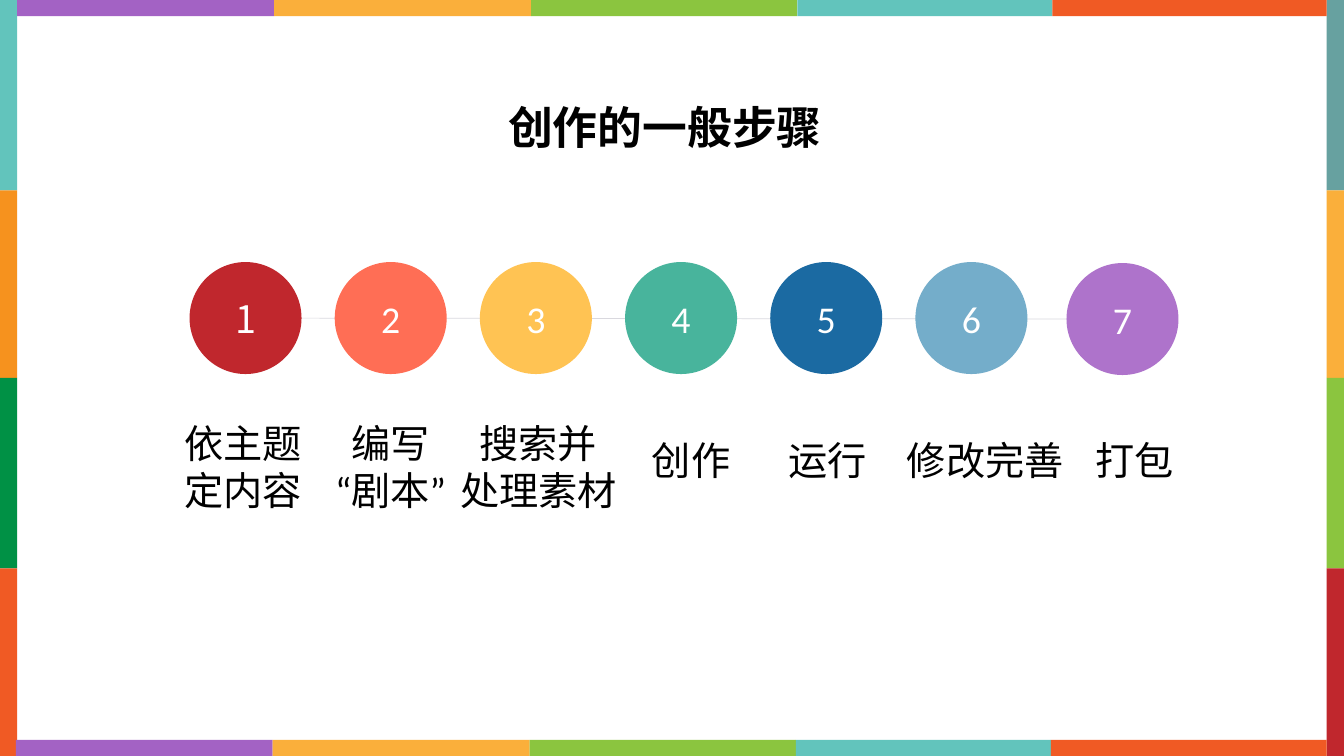
import itertools

import pptx
import pptx.dml.color
import pptx.enum.shapes
import pptx.enum.text
import pptx.oxml
import pptx.oxml.ns
import pptx.util

Pt = pptx.util.Pt
SHAPE = pptx.enum.shapes.MSO_SHAPE
ALIGN = pptx.enum.text.PP_ALIGN
ANCHOR = pptx.enum.text.MSO_ANCHOR

WIDTH, HEIGHT = 960, 540
COLOURS = {
    "black": "000000", "white": "FFFFFF", "thread": "524F6A",
    "aqua": "62C4BC", "orange": "F6921E", "forest": "009145",
    "flame": "F05A24", "sage": "67A1A0", "amber": "FAAF3B",
    "lime": "8BC53F", "red": "C0272D", "purple": "A362C4",
    "coral": "FF6E55", "yellow": "FFC353", "green": "48B49C",
    "blue": "1B6AA2", "sky": "74ADCA", "lilac": "AE73CB",
}
LATIN, CHINESE = "Calibri", "Noto Sans CJK SC"

# Circle colour, number font, label, label left, label width, label alignment
STEPS = [
    ("red", CHINESE, "依主题\n定内容", 124.6, 102.2, ALIGN.LEFT),
    ("coral", LATIN, "编写\n“剧本”", 213.1, 131.8, ALIGN.CENTER),
    ("yellow", LATIN, "搜索并\n处理素材", 311.8, 145.4, ALIGN.CENTER),
    ("green", LATIN, "创作", 458.6, 72, ALIGN.LEFT),
    ("blue", LATIN, "运行", 555.8, 72.7, ALIGN.LEFT),
    ("sky", LATIN, "修改完善", 640.8, 131.8, ALIGN.LEFT),
    ("lilac", LATIN, "打包", 775.4, 72.7, ALIGN.LEFT),
]


def rgb(name):
    return pptx.dml.color.RGBColor.from_string(COLOURS[name])


def write(frame, text, size, font, colour, align, bold=False):
    frame.text = text
    for paragraph in frame.paragraphs:
        paragraph.alignment = align
        for run in paragraph.runs:
            run.font.size = Pt(size)
            run.font.bold = bold
            run.font.color.rgb = rgb(colour)
            run.font.name = font
            # East Asian glyphs follow the same font
            east_asian = pptx.oxml.parse_xml(
                f'<a:ea {pptx.oxml.ns.nsdecls("a")} typeface="{font}"/>')
            run.font._element.find(pptx.oxml.ns.qn("a:latin")).addnext(east_asian)


def add_filled(slide, kind, left, top, width, height, colour):
    shape = slide.shapes.add_shape(kind, Pt(left), Pt(top), Pt(width), Pt(height))
    shape.shadow.inherit = False
    shape.fill.solid()
    shape.fill.fore_color.rgb = rgb(colour)
    shape.line.fill.background()
    return shape


def add_border(slide, width, height):
    side, edge = 12.3, 11.5
    # Side strips
    levels = [0, 136, 270, 406, height]
    for left, names in ((0, ("aqua", "orange", "forest", "flame")),
                        (width - side, ("sage", "amber", "lime", "red"))):
        for (top, bottom), name in zip(itertools.pairwise(levels), names):
            add_filled(slide, SHAPE.RECTANGLE, left, top, side, bottom - top, name)
    # Top and bottom strips
    stops = [12.3, 195.8, 379.4, 569.5, 751.7, width - side]
    names = ("purple", "amber", "lime", "aqua", "flame")
    for top, shift in ((0, 0), (height - edge, -1)):
        for (left, right), name in zip(itertools.pairwise(stops), names):
            end = right if right == stops[-1] else right + shift
            add_filled(slide, SHAPE.RECTANGLE, left + shift, top,
                       end - left - shift, edge, name)


def add_title(slide, left, top, width, height):
    title = slide.shapes.title
    title.left, title.top = Pt(left), Pt(top)
    title.width, title.height = Pt(width), Pt(height)
    frame = title.text_frame
    frame.auto_size = pptx.enum.text.MSO_AUTO_SIZE.NONE
    frame.vertical_anchor = ANCHOR.TOP
    write(frame, "创作的一般步骤", 32, CHINESE, "black", ALIGN.LEFT, bold=True)


def add_thread(slide, left, top, right, bottom):
    thread = slide.shapes.add_connector(
        pptx.enum.shapes.MSO_CONNECTOR.STRAIGHT,
        Pt(left), Pt(top), Pt(right), Pt(bottom))
    thread.line.width = Pt(0.5)
    thread.line.color.rgb = rgb("thread")
    properties = thread._element.spPr
    colour = properties.find(".//" + pptx.oxml.ns.qn("a:srgbClr"))
    declared = pptx.oxml.ns.nsdecls("a")
    colour.append(pptx.oxml.parse_xml(f'<a:alpha {declared} val="22000"/>'))
    properties.append(pptx.oxml.parse_xml(f"<a:effectLst {declared}/>"))


def add_steps(slide, left, top, diameter, pitch):
    last = len(STEPS) - 1
    last_left, last_top = left + last * pitch + 4.2, top + 0.7
    add_thread(slide, left + 52.5, top + diameter / 2,
               last_left, last_top + diameter / 2)
    for index, (colour, font, label, label_left, label_width, align) in enumerate(STEPS):
        # Numbered circle
        x, y = (last_left, last_top) if index == last else (left + index * pitch, top)
        circle = add_filled(slide, SHAPE.OVAL, x, y, diameter, diameter, colour)
        circle.text_frame.vertical_anchor = ANCHOR.MIDDLE
        write(circle.text_frame, str(index + 1), 27, font, "white", ALIGN.CENTER)
        # Label below it
        two_lines = "\n" in label
        caption = slide.shapes.add_textbox(
            Pt(label_left), Pt(top + (108.7 if two_lines else 121)),
            Pt(label_width), Pt(75 if two_lines else 41))
        caption.text_frame.word_wrap = True
        write(caption.text_frame, label, 28, LATIN, "black", align)


def main():
    deck = pptx.Presentation()
    deck.slide_width, deck.slide_height = Pt(WIDTH), Pt(HEIGHT)
    slide = deck.slides.add_slide(deck.slide_layouts.get_by_name("Title Only"))
    add_border(slide, WIDTH, HEIGHT)
    add_title(slide, 355.7, 67.7, 247.7, 85)
    add_steps(slide, 135.4, 187.2, 80, 103.7)
    deck.save("out.pptx")


if __name__ == "__main__":
    main()
